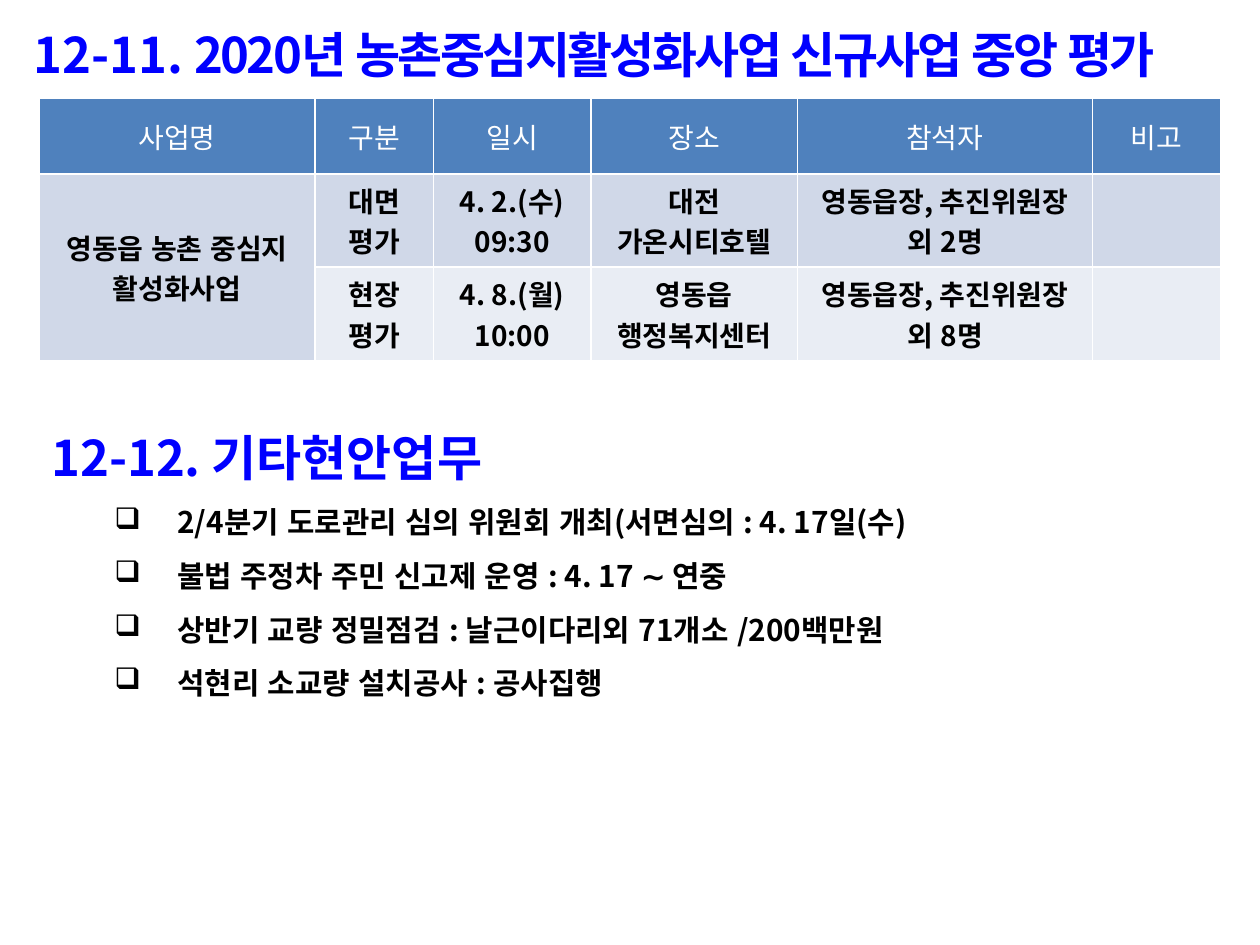
"""Build the slide on the central evaluation schedule and other pending work."""
from lxml import etree
from pptx import Presentation
from pptx.dml.color import RGBColor
from pptx.enum.lang import MSO_LANGUAGE_ID
from pptx.enum.text import MSO_ANCHOR, PP_ALIGN
from pptx.oxml.ns import qn
from pptx.util import Inches, Pt

CENTER, LEFT = PP_ALIGN.CENTER, PP_ALIGN.LEFT
MIDDLE = MSO_ANCHOR.MIDDLE
KOREAN = MSO_LANGUAGE_ID.KOREAN
FONT = "Noto Sans CJK KR"
BLUE = RGBColor(0x00, 0x00, 0xFF)
BLACK = RGBColor(0x00, 0x00, 0x00)
WHITE = RGBColor(0xFF, 0xFF, 0xFF)
HEADER_FILL = RGBColor(0x4F, 0x81, 0xBD)
BAND_FILLS = [RGBColor(0xD0, 0xD8, 0xE8), RGBColor(0xE9, 0xED, 0xF4)]

EVALUATION_HEADING = [("12-11. ", 0), ("2020년 농촌중심지활성화사업 신규사업 중앙 평가", -150)]
PENDING_HEADING = [("12-12. 기타현안업무", 0)]
PENDING_WORK = [
    "2/4분기 도로관리 심의 위원회 개최(서면심의 : 4. 17일(수)",
    "불법 주정차 주민 신고제 운영 : 4. 17 ∼ 연중",
    "상반기 교량 정밀점검 : 날근이다리외 71개소 /200백만원",
    "석현리 소교량 설치공사 : 공사집행",
]
SCHEDULE = [
    ["사업명", "구분", "일시", "장소", "참석자", "비고"],
    ["영동읍 농촌 중심지\n활성화사업", "대면\n평가", "4. 2.(수) 09:30",
     "대전\n가온시티호텔", "영동읍장, 추진위원장 외 2명", ""],
    ["", "현장\n평가", "4. 8.(월) 10:00",
     "영동읍\n행정복지센터", "영동읍장, 추진위원장 외 8명", ""],
]
COLUMN_WIDTHS = [2.19, 0.94, 1.25, 1.64, 2.34, 1.02]
ROW_HEIGHTS = [0.6, 0.74, 0.74]


def style(paragraph, size, color, bold, align=LEFT):
    paragraph.alignment = align
    for font in [paragraph.font] + [run.font for run in paragraph.runs]:
        font.size, font.bold, font.name = Pt(size), bold, FONT
        font.color.rgb = color
        font.language_id = KOREAN
        etree.SubElement(font._element, qn("a:ea"), typeface=FONT)


def add_heading(slide, left, top, width, height, parts):
    frame = slide.shapes.add_textbox(*map(Inches, (left, top, width, height))).text_frame
    frame.word_wrap = True
    frame.margin_top = Inches(0.1)
    heading = frame.paragraphs[0]
    heading.line_spacing = 1.2
    for text, spacing in parts:
        run = heading.add_run()
        run.text = text
        if spacing:
            run._r.get_or_add_rPr().set("spc", str(spacing))
    style(heading, 28, BLUE, True)
    return frame


def add_bullet(frame, text):
    item = frame.add_paragraph()
    item.text = text
    item.line_spacing = 1.5
    properties = item._p.get_or_add_pPr()
    properties.set("marL", str(Inches(1)))
    properties.set("indent", str(Inches(-0.5)))
    etree.SubElement(properties, qn("a:buChar"), char="❑")
    style(item, 17, BLACK, True)


def add_borders(cell):
    properties = cell._tc.get_or_add_tcPr()
    for side in ("lnL", "lnR", "lnT", "lnB"):
        line = etree.SubElement(properties, qn(f"a:{side}"), w=str(Pt(1)))
        fill = etree.SubElement(line, qn("a:solidFill"))
        etree.SubElement(fill, qn("a:srgbClr"), val=str(WHITE))


def add_schedule(slide, left, top):
    table = slide.shapes.add_table(
        len(SCHEDULE), len(COLUMN_WIDTHS), Inches(left), Inches(top),
        Inches(sum(COLUMN_WIDTHS)), Inches(sum(ROW_HEIGHTS))).table
    for column, width in zip(table.columns, COLUMN_WIDTHS):
        column.width = Inches(width)
    for row, height in zip(table.rows, ROW_HEIGHTS):
        row.height = Inches(height)
    table.cell(1, 0).merge(table.cell(2, 0))
    for r, texts in enumerate(SCHEDULE):
        is_header = r == 0
        for c, text in enumerate(texts):
            cell = table.cell(r, c)
            add_borders(cell)
            cell.fill.solid()
            cell.fill.fore_color.rgb = HEADER_FILL if is_header else BAND_FILLS[r - 1]
            cell.vertical_anchor = MIDDLE
            cell.text = text
            for paragraph in cell.text_frame.paragraphs:
                style(paragraph, 16, WHITE if is_header else BLACK, not is_header, CENTER)


def main():
    deck = Presentation()
    deck.slide_width, deck.slide_height = Inches(10), Inches(7.5)
    slide = deck.slides.add_slide(deck.slide_layouts[6])
    add_heading(slide, 0.17, 0, 9.83, 0.8, EVALUATION_HEADING)
    add_schedule(slide, 0.31, 0.78)
    pending = add_heading(slide, 0.31, 3.2, 9.37, 2.5, PENDING_HEADING)
    for text in PENDING_WORK:
        add_bullet(pending, text)
    deck.save("out.pptx")


if __name__ == "__main__":
    main()
